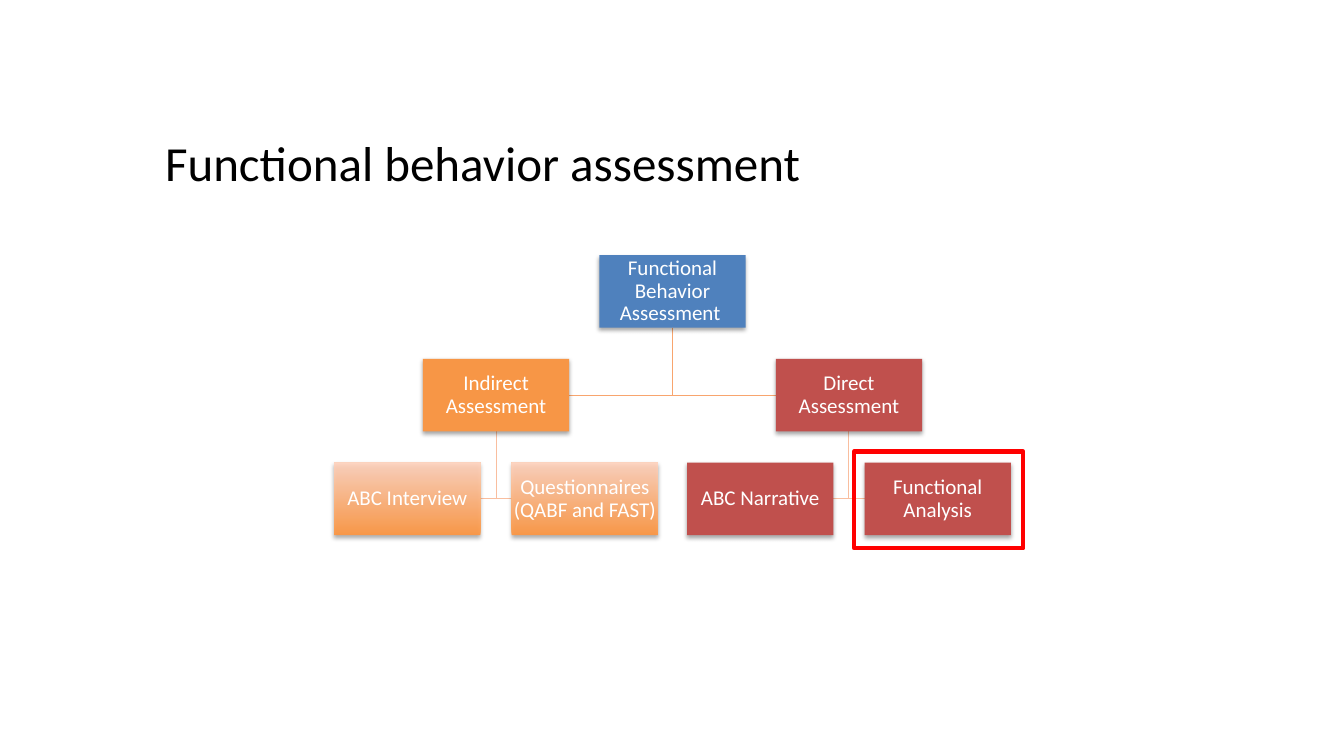
from lxml import etree
from pptx import Presentation
from pptx.dml.color import RGBColor
from pptx.enum.shapes import MSO_SHAPE
from pptx.enum.text import MSO_ANCHOR, MSO_AUTO_SIZE, PP_ALIGN
from pptx.oxml import parse_xml
from pptx.oxml.ns import nsdecls, qn
from pptx.util import Inches, Pt

BLACK = RGBColor(0x00, 0x00, 0x00)
WHITE = RGBColor(0xFF, 0xFF, 0xFF)
BLUE = RGBColor(0x4F, 0x81, 0xBD)
ORANGE = RGBColor(0xF7, 0x96, 0x46)
RED = RGBColor(0xC0, 0x50, 0x4D)
BRIGHT_RED = RGBColor(0xFF, 0x00, 0x00)
ORANGE_FADE = (RGBColor(0xFF, 0x95, 0x3E), RGBColor(0xFF, 0xD2, 0xBD))
UPPER_LINE = RGBColor(0xF8, 0xA5, 0x6E)
LOWER_LINE = RGBColor(0xF9, 0xBE, 0x9F)

BOX_W, BOX_H = 1.45, 0.72
CENTER, TOP, ROW_STEP = 6.67, 2.53, 1.03
BRANCH, LEAF = 1.75, 0.88  # sideways step from a parent's centre

SHADOW = (
    f'<a:outerShdw {nsdecls("a")} blurRad="40000" dist="23000" dir="5400000" '
    'rotWithShape="0"><a:srgbClr val="000000"><a:alpha val="35000"/></a:srgbClr>'
    '</a:outerShdw>'
)


def write(frame, text, size, color, anchor, spacing=None, margin=None):
    frame.word_wrap = True
    frame.auto_size = MSO_AUTO_SIZE.NONE
    frame.vertical_anchor = anchor
    if margin is not None:
        frame.margin_left = frame.margin_right = Inches(margin)
        frame.margin_top = frame.margin_bottom = Inches(margin)
    line = frame.paragraphs[0]
    line.alignment = PP_ALIGN.CENTER
    line.line_spacing = spacing
    run = line.add_run()
    run.text = text
    run.font.name = "Calibri"
    run.font.size = Pt(size)
    run.font.color.rgb = color


prs = Presentation()
prs.slide_width, prs.slide_height = Inches(13.33), Inches(7.5)
slide = prs.slides.add_slide(prs.slide_layouts[5])
shapes = slide.shapes

# Title
title = shapes.title
title.left, title.top = Inches(-0.96), Inches(1.26)
title.width, title.height = Inches(11.5), Inches(1.45)
write(title.text_frame, "Functional behavior assessment", 35, BLACK, MSO_ANCHOR.TOP)

# Tree: text, centre, level, fill, parent's centre
left, right = CENTER - BRANCH, CENTER + BRANCH
tree = [
    ("Functional Behavior Assessment ", CENTER, 0, BLUE, None),
    ("Indirect Assessment", left, 1, ORANGE, CENTER),
    ("ABC Interview", left - LEAF, 2, ORANGE_FADE, left),
    ("Questionnaires (QABF and FAST)", left + LEAF, 2, ORANGE_FADE, left),
    ("Direct Assessment", right, 1, RED, CENTER),
    ("ABC Narrative", right - LEAF, 2, RED, right),
    ("Functional Analysis", right + LEAF, 2, RED, right),
]

# Elbow lines from each parent's bottom to the near side of its child
for text, center, level, fill, parent in tree:
    if parent is None:
        continue
    start = TOP + (level - 1) * ROW_STEP + BOX_H
    end = TOP + level * ROW_STEP + BOX_H / 2
    side = center + BOX_W / 2 if center < parent else center - BOX_W / 2
    builder = shapes.build_freeform(Inches(parent), Inches(start))
    builder.add_line_segments(
        [(Inches(parent), Inches(end)), (Inches(side), Inches(end))], close=False)
    elbow = builder.convert_to_shape()
    elbow.fill.background()
    elbow.line.color.rgb = UPPER_LINE if level == 1 else LOWER_LINE
    elbow.line.width = Pt(0.75)
    elbow.shadow.inherit = False

# Boxes
for text, center, level, fill, parent in tree:
    box = shapes.add_shape(
        MSO_SHAPE.RECTANGLE, Inches(center - BOX_W / 2),
        Inches(TOP + level * ROW_STEP), Inches(BOX_W), Inches(BOX_H))
    if fill is ORANGE_FADE:
        box.fill.gradient()
        box.fill.gradient_angle = 90
        for stop, color in zip(box.fill.gradient_stops, fill):
            stop.color.rgb = color
        for color in box.fill._xPr.iter(qn("a:srgbClr")):
            etree.SubElement(color, qn("a:alpha"), val="90000")
    else:
        box.fill.solid()
        box.fill.fore_color.rgb = fill
    box.line.fill.background()
    box.shadow.inherit = False
    box._element.spPr.find(qn("a:effectLst")).append(parse_xml(SHADOW))
    write(box.text_frame, text, 15, WHITE, MSO_ANCHOR.MIDDLE, spacing=0.9, margin=0.01)

# Frame around the functional analysis box
highlight = shapes.add_shape(
    MSO_SHAPE.RECTANGLE, Inches(8.47), Inches(4.48), Inches(1.68), Inches(0.96))
highlight.fill.background()
highlight.line.color.rgb = BRIGHT_RED
highlight.line.width = Pt(3)
highlight.shadow.inherit = False

prs.save("out.pptx")
